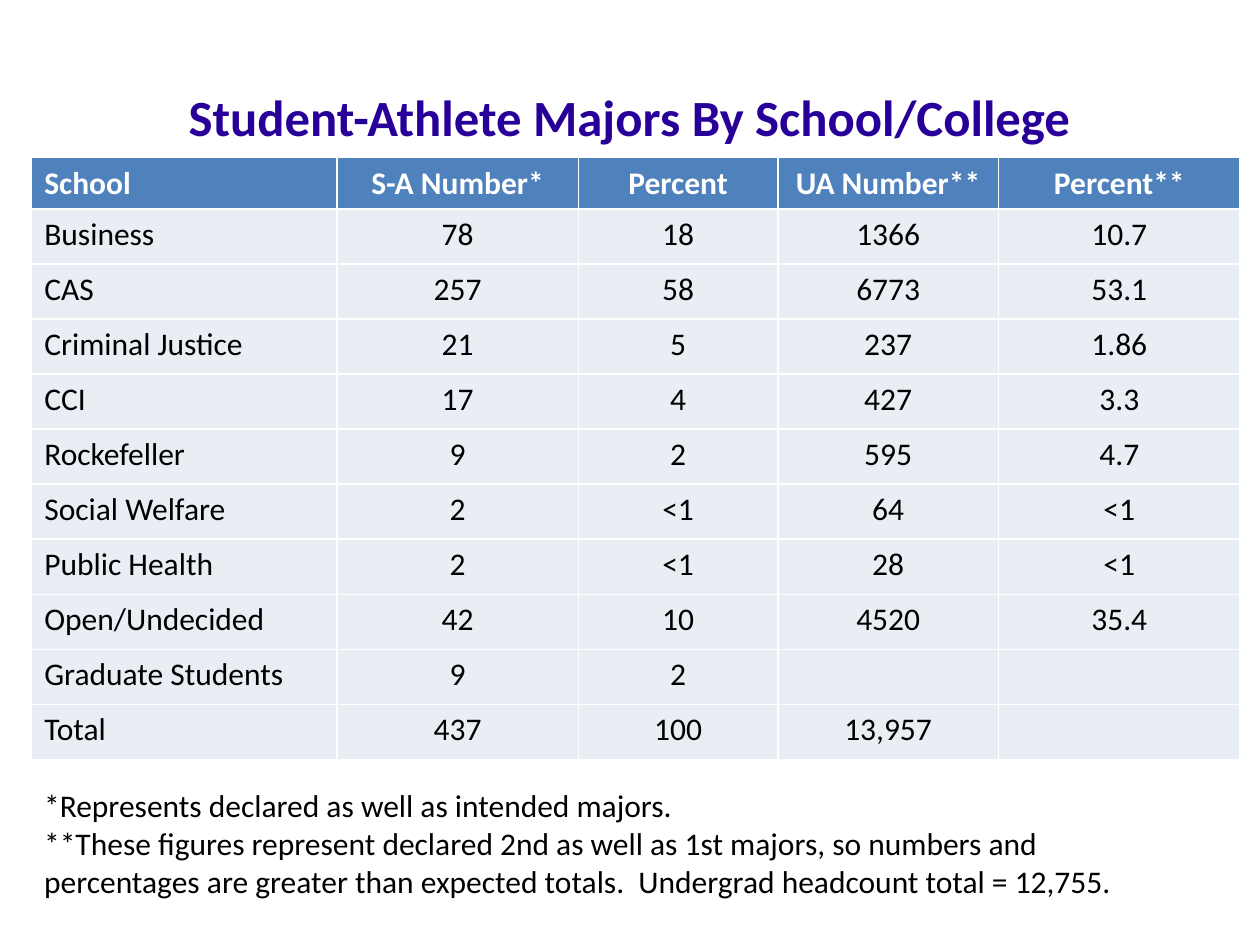
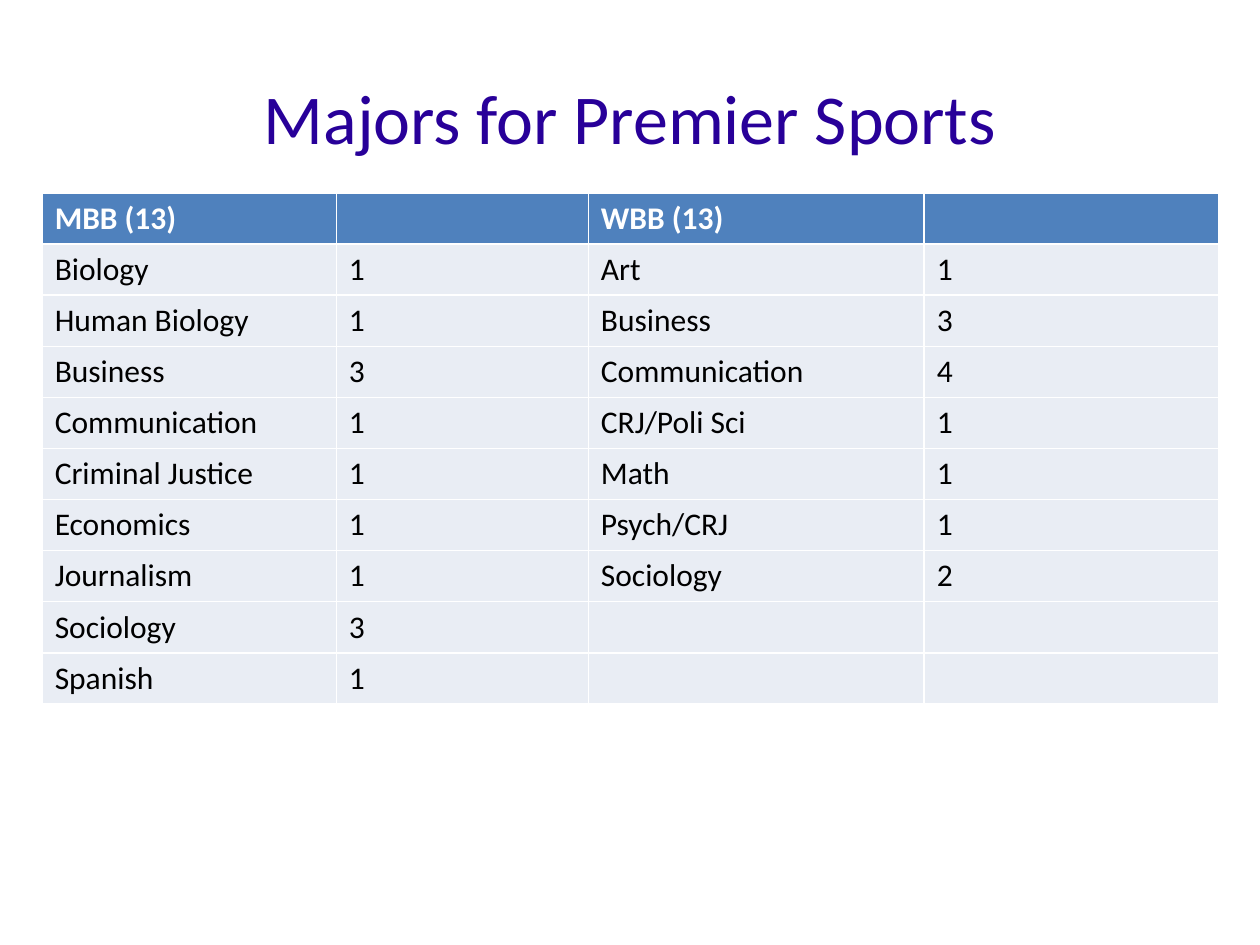
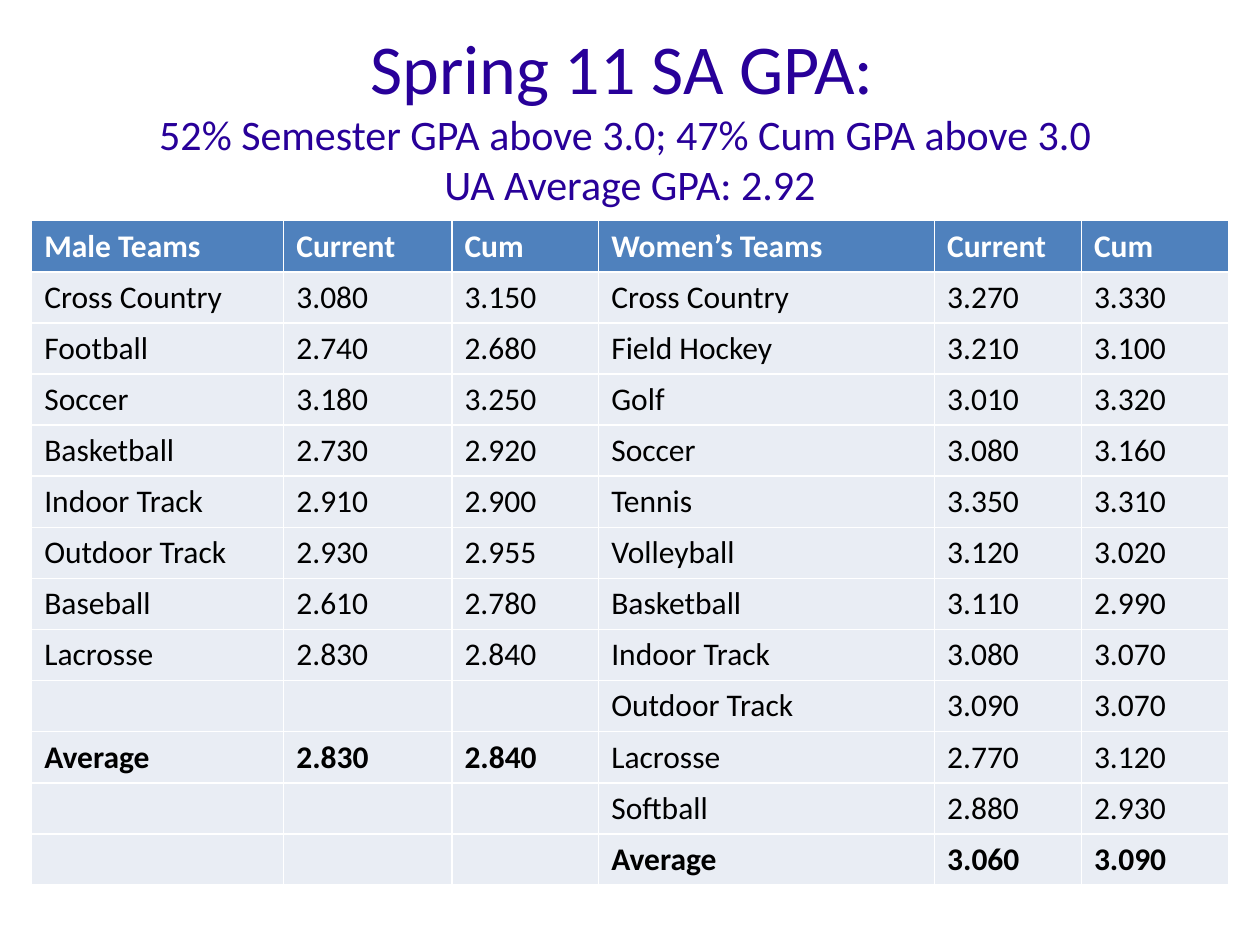
"""Build three slides on student-athlete majors and grades."""
from lxml.etree import SubElement
from pptx import Presentation
from pptx.dml.color import RGBColor
from pptx.enum.text import MSO_ANCHOR, MSO_AUTO_SIZE, PP_ALIGN
from pptx.oxml.ns import qn
from pptx.util import Cm, Pt

MAJORS = [
    ("School", "S-A Number*", "Percent", "UA Number**", "Percent**"),
    ("Business", "78", "18", "1366", "10.7"),
    ("CAS", "257", "58", "6773", "53.1"),
    ("Criminal Justice", "21", "5", "237", "1.86"),
    ("CCI", "17", "4", "427", "3.3"),
    ("Rockefeller", "9", "2", "595", "4.7"),
    ("Social Welfare", "2", "<1", "64", "<1"),
    ("Public Health", "2", "<1", "28", "<1"),
    ("Open/Undecided", "42", "10", "4520", "35.4"),
    ("Graduate Students", "9", "2", "", ""),
    ("Total", "437", "100", "13,957", ""),
]
PREMIER_SPORTS = [
    ("MBB (13)", "", "WBB (13)", ""),
    ("Biology", "1", "Art", "1"),
    ("Human Biology", "1", "Business", "3"),
    ("Business", "3", "Communication", "4"),
    ("Communication", "1", "CRJ/Poli Sci", "1"),
    ("Criminal Justice", "1", "Math", "1"),
    ("Economics", "1", "Psych/CRJ", "1"),
    ("Journalism", "1", "Sociology", "2"),
    ("Sociology", "3", "", ""),
    ("Spanish", "1", "", ""),
]
TEAM_GRADES = [
    ("Male Teams", "Current", "Cum", "Women’s Teams", "Current", "Cum"),
    ("Cross Country", "3.080", "3.150", "Cross Country", "3.270", "3.330"),
    ("Football", "2.740", "2.680", "Field Hockey", "3.210", "3.100"),
    ("Soccer", "3.180", "3.250", "Golf", "3.010", "3.320"),
    ("Basketball", "2.730", "2.920", "Soccer", "3.080", "3.160"),
    ("Indoor Track", "2.910", "2.900", "Tennis", "3.350", "3.310"),
    ("Outdoor Track", "2.930", "2.955", "Volleyball", "3.120", "3.020"),
    ("Baseball", "2.610", "2.780", "Basketball", "3.110", "2.990"),
    ("Lacrosse", "2.830", "2.840", "Indoor Track", "3.080", "3.070"),
    ("", "", "", "Outdoor Track", "3.090", "3.070"),
    ("Average", "2.830", "2.840", "Lacrosse", "2.770", "3.120"),
    ("", "", "", "Softball", "2.880", "2.930"),
    ("", "", "", "Average", "3.060", "3.090"),
]
FOOTNOTES = [
    "*Represents declared as well as intended majors.",
    "**These figures represent declared 2nd as well as 1st majors, so numbers and "
    "percentages are greater than expected totals.  Undergrad headcount total = 12,755.",
]


def color(value):
    """Turn a hex string into a colour."""
    return RGBColor.from_string(value)


class Report:
    """Hold the deck, its style and the current page."""

    FONT = "Calibri"
    TITLE, HEADER, BODY = "280099", "4F81BD", "E9EDF4"
    WHITE, BLACK = "FFFFFF", "000000"
    TEXT_SIZE, SUBTITLE_SIZE = 18, 24

    def __init__(self):
        """Start an empty deck."""
        self.deck = Presentation()
        self.deck.slide_width, self.deck.slide_height = Cm(25.4), Cm(19.05)
        self.page = None

    def style(self, para, size, tint, bold=False):
        """Format every run of a paragraph."""
        for span in para.runs:
            span.font.name = self.FONT
            span.font.size = Pt(size)
            span.font.bold = bold
            span.font.color.rgb = color(tint)

    def add_page(self, lines, size=40, bold=False, top=0.76, height=3.18):
        """Add a page with a centred title and smaller lines under it."""
        self.page = self.deck.slides.add_slide(self.deck.slide_layouts[5])
        box = self.page.shapes.title
        box.left, box.top, box.width, box.height = Cm(1.27), Cm(top), Cm(22.86), Cm(height)
        frame = box.text_frame
        frame.word_wrap = True
        frame.auto_size = MSO_AUTO_SIZE.NONE
        frame.vertical_anchor = MSO_ANCHOR.MIDDLE
        frame.margin_left = frame.margin_right = frame.margin_top = frame.margin_bottom = 0
        para = frame.paragraphs[0]
        para.text = lines
        para.alignment = PP_ALIGN.CENTER
        self.style(para, size, self.TITLE, bold)
        for span in para.runs[1:]:
            span.font.size = Pt(self.SUBTITLE_SIZE)
        for line_break in para._p.findall(qn("a:br")):
            SubElement(line_break, qn("a:rPr"), sz=str(self.SUBTITLE_SIZE * 100))

    def add_table(self, rows, left, top, widths, row_height, header_height, centered=False):
        """Add a table whose figures may be centred and whose averages are bold."""
        height = header_height + row_height * (len(rows) - 1)
        table = self.page.shapes.add_table(
            len(rows), len(widths), Cm(left), Cm(top), Cm(sum(widths)), Cm(height)).table
        table.horz_banding = False
        for column, width in zip(table.columns, widths):
            column.width = Cm(width)
        for number, values in enumerate(rows):
            header = number == 0
            table.rows[number].height = Cm(header_height if header else row_height)
            average = False
            for position, value in enumerate(values):
                cell = table.cell(number, position)
                cell.fill.solid()
                cell.fill.fore_color.rgb = color(self.HEADER if header else self.BODY)
                if value[:1].isalpha():
                    average = value == "Average"
                para = cell.text_frame.paragraphs[0]
                para.text = value
                if centered and position:
                    para.alignment = PP_ALIGN.CENTER
                self.style(para, self.TEXT_SIZE, self.WHITE if header else self.BLACK,
                           header or average)

    def add_notes_box(self, lines, left, top, width, height):
        """Add a text box with one paragraph a line."""
        box = self.page.shapes.add_textbox(Cm(left), Cm(top), Cm(width), Cm(height))
        frame = box.text_frame
        frame.word_wrap = True
        frame.auto_size = MSO_AUTO_SIZE.SHAPE_TO_FIT_TEXT
        frame.text = "\n".join(lines)
        for para in frame.paragraphs:
            self.style(para, self.TEXT_SIZE, self.BLACK)


def main():
    """Build and save the deck."""
    report = Report()

    report.add_page("Student-Athlete Majors By School/College", size=29, bold=True)
    report.add_table(MAJORS, 0.64, 3.18, (6.15, 4.87, 4.02, 4.45, 4.87), 1.11, 1, centered=True)
    report.add_notes_box(FOOTNOTES, 0.64, 15.72, 23.5, 3.33)

    report.add_page("Majors for Premier Sports")
    report.add_table(PREMIER_SPORTS, 0.85, 3.89, (5.93, 5.08, 6.77, 5.93), 1.03, 1.03)

    report.add_page("Spring 11 SA GPA: \n52% Semester GPA above 3.0; 47% Cum GPA above 3.0 \n"
                    "UA Average GPA: 2.92", top=0.64, height=3.43)
    report.add_table(TEAM_GRADES, 0.64, 4.45, (5.08, 3.39, 2.96, 6.77, 2.96, 2.96), 1.02, 1.02)

    report.deck.save("out.pptx")


if __name__ == "__main__":
    main()
